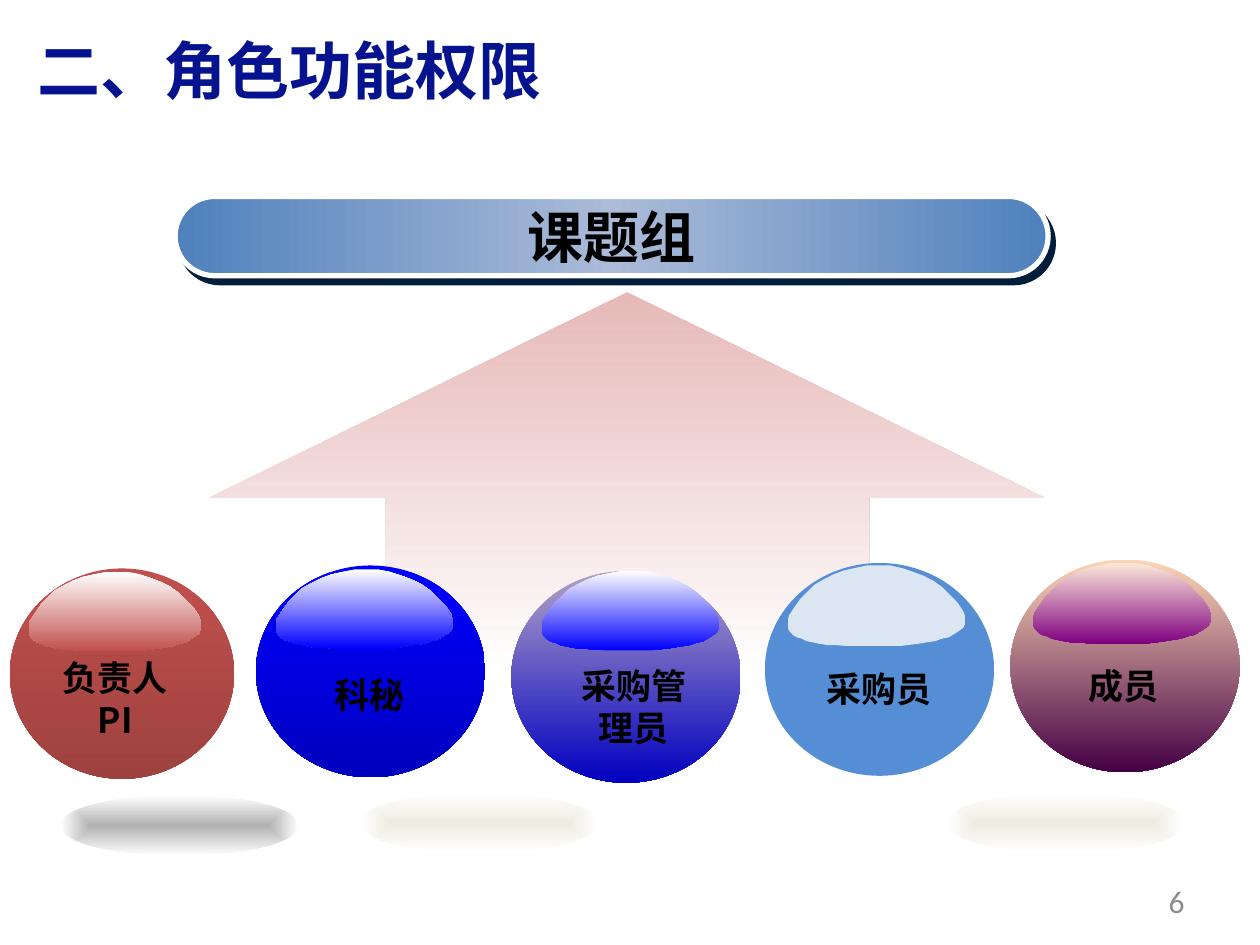
from lxml import etree
from pptx import Presentation
from pptx import util as u
from pptx.dml.color import RGBColor
from pptx.enum import shapes, text
from pptx.oxml import ns

CJK = "Noto Sans CJK SC"
LABEL = dict(size=u.Pt(20), bold=True, name=CJK)
SHAPE = shapes.MSO_SHAPE
ALIGN = text.PP_ALIGN

# Outline of the highlight on a ball, on a 140 x 63 grid
GLOSS_GRID = (140, 63)
GLOSS = [
    (138, 35), (140, 39), (140, 46), (138, 49), (135, 51), (132, 53), (127, 56),
    (122, 57), (116, 59), (109, 60), (103, 61), (95, 62), (87, 63), (50, 63),
    (37, 62), (31, 62), (25, 61), (20, 60), (15, 59), (11, 57), (7, 56), (4, 54),
    (2, 52), (0, 49), (0, 43), (1, 39), (5, 33), (10, 26), (15, 21), (21, 15),
    (28, 11), (36, 7), (44, 4), (53, 2), (62, 0), (71, 0), (81, 0), (90, 2),
    (99, 5), (107, 8), (115, 12), (122, 17), (128, 23), (134, 29),
]

# Label, wraps, ball box, ball colours, gloss box, gloss colours, label box
ROLES = [
    ("负责人\nPI", False, (0.2, 11.46, 4.52, 4.24), ("C0504D", "9E423F"),
     (0.58, 11.53, 3.48, 1.6), ("FFFFFF", "C0504D"), (0.99, 13.11, 2.67, 1.96)),
    ("科秘", True, (5.16, 11.4, 4.62, 4.27), ("0000FF", "0000BF"),
     (5.56, 11.48, 3.58, 1.6), ("FFFFFF", "0000FF"), (5.77, 13.46, 3.38, 1.12)),
    ("采购管理员", True, (10.31, 11.51, 4.62, 4.27), ("B3A2C7", "0000BF"),
     (10.92, 11.51, 3.58, 1.6), ("FFFFFF", "0000FF"), (11.25, 13.28, 3.05, 1.96)),
    ("采购员", False, (15.42, 11.35, 4.62, 4.29), ("558ED5", "558ED5"),
     (15.88, 11.4, 3.58, 1.63), ("DCE6F2", "DCE6F2"), (16.38, 13.34, 2.67, 1.12)),
    ("成员", False, (20.37, 11.28, 4.62, 4.29), ("FCD5B5", "450045"),
     (20.83, 11.35, 3.58, 1.63), ("FDEADA", "800080"), (21.67, 13.28, 1.96, 1.12)),
]

FLOOR_SHADOWS = [(1.22, 16.03, "B2B2B2"), (7.26, 15.98, "EEECE1"),
                 (19.08, 15.98, "EEECE1")]


def color(value):
    return RGBColor.from_string(value)


def cm(box):
    return [u.Cm(v) for v in box]


def add_xml(parent, tag, **attrs):
    return etree.SubElement(parent, ns.qn(tag), attrs)


def fill_gradient(sp, colors, angle=90, radial=False):
    """Spread the colours evenly, along an angle or outwards from the centre."""
    sp.fill.background()
    no_fill = sp._element.spPr.find(ns.qn("a:noFill"))
    grad = etree.Element(ns.qn("a:gradFill"), rotWithShape="1")
    stops = add_xml(grad, "a:gsLst")
    for i, value in enumerate(colors):
        stop = add_xml(stops, "a:gs", pos=str(100000 * i // (len(colors) - 1)))
        add_xml(stop, "a:srgbClr", val=value)
    if radial:
        center = add_xml(grad, "a:path", path="shape")
        add_xml(center, "a:fillToRect", l="50000", t="50000", r="50000", b="50000")
    else:
        add_xml(grad, "a:lin", ang=str(angle * 60000), scaled="0")
    no_fill.getparent().replace(no_fill, grad)


def write(tf, content, fmt, font_color="000000", align=ALIGN.CENTER):
    tf.text = content
    for p in tf.paragraphs:
        p.alignment = align
        for r in p.runs:
            for key, value in fmt.items():
                setattr(r.font, key, value)
            r.font.color.rgb = color(font_color)
            add_xml(r._r.get_or_add_rPr(), "a:ea", typeface=fmt["name"])


def add_title(s, content):
    sp = s.shapes.title
    sp.left, sp.top, sp.width, sp.height = cm((0.51, 0.79, 14.17, 1.4))
    tf = sp.text_frame
    tf.auto_size = text.MSO_AUTO_SIZE.NONE
    tf.vertical_anchor = text.MSO_ANCHOR.MIDDLE
    write(tf, content, dict(LABEL, size=u.Pt(36)), "05148E", ALIGN.LEFT)
    tf.paragraphs[0].line_spacing = 0.9


def add_label(s, content, box, fmt, wrap=True, **options):
    tf = s.shapes.add_textbox(*cm(box)).text_frame
    tf.word_wrap = wrap
    write(tf, content, fmt, **options)
    return tf


def add_filled(s, kind, box, colors, **gradient):
    sp = s.shapes.add_shape(kind, *cm(box))
    sp.shadow.inherit = False
    sp.line.fill.background()
    fill_gradient(sp, colors, **gradient)
    return sp


def add_gloss(s, box, colors):
    left, top, width, height = cm(box)
    scale = (width / GLOSS_GRID[0], height / GLOSS_GRID[1])
    outline = s.shapes.build_freeform(*GLOSS[0], scale=scale)
    outline.add_line_segments(GLOSS[1:], close=True)
    sp = outline.convert_to_shape(left, top)
    sp.shadow.inherit = False
    sp.line.fill.background()
    fill_gradient(sp, colors)


def add_group_bar(s, content):
    sp = add_filled(s, SHAPE.ROUNDED_RECTANGLE, (3.53, 3.96, 17.6, 1.6),
                    ("4F81BD", "ABBBD8", "4F81BD"), angle=0)
    sp.adjustments[0] = 0.5
    sp.line.color.rgb = color("FFFFFF")
    sp.line.width = u.Pt(3)
    effects = sp._element.spPr.find(ns.qn("a:effectLst"))
    shadow = add_xml(effects, "a:outerShdw", dist=str(u.Pt(5)),
                     dir=str(53 * 60000), algn="ctr", rotWithShape="0")
    add_xml(shadow, "a:srgbClr", val="001D3A")
    tf = sp.text_frame
    tf.word_wrap = False
    tf.vertical_anchor = text.MSO_ANCHOR.MIDDLE
    write(tf, content, dict(LABEL, size=u.Pt(32)))


def add_role(s, label, wrap, ball, ball_colors, gloss, gloss_colors, label_box):
    add_filled(s, SHAPE.OVAL, ball, ball_colors)
    add_gloss(s, gloss, gloss_colors)
    add_label(s, label, label_box, LABEL, wrap)


def main():
    prs = Presentation()
    prs.slide_width, prs.slide_height = u.Cm(25.4), u.Cm(19.05)
    s = prs.slides.add_slide(prs.slide_layouts[5])
    add_title(s, "二、角色功能权限")
    arrow = add_filled(s, SHAPE.UP_ARROW, (4.24, 5.89, 16.81, 7.67),
                       ("E6B9B8", "FFFFFF"))
    arrow.adjustments[0], arrow.adjustments[1] = 0.58, 0.54
    add_group_bar(s, "课题组")
    for left, top, shade in FLOOR_SHADOWS:
        add_filled(s, SHAPE.OVAL, (left, top, 4.8, 1.22), (shade, "FFFFFF"),
                   radial=True)
    for role in ROLES:
        add_role(s, *role)
    number = add_label(s, "6", (18.21, 17.65, 5.92, 1.02),
                       dict(size=u.Pt(18), name="Calibri"),
                       font_color="8C8C8C", align=ALIGN.RIGHT)
    number.vertical_anchor = text.MSO_ANCHOR.MIDDLE
    prs.save("out.pptx")


if __name__ == "__main__":
    main()
